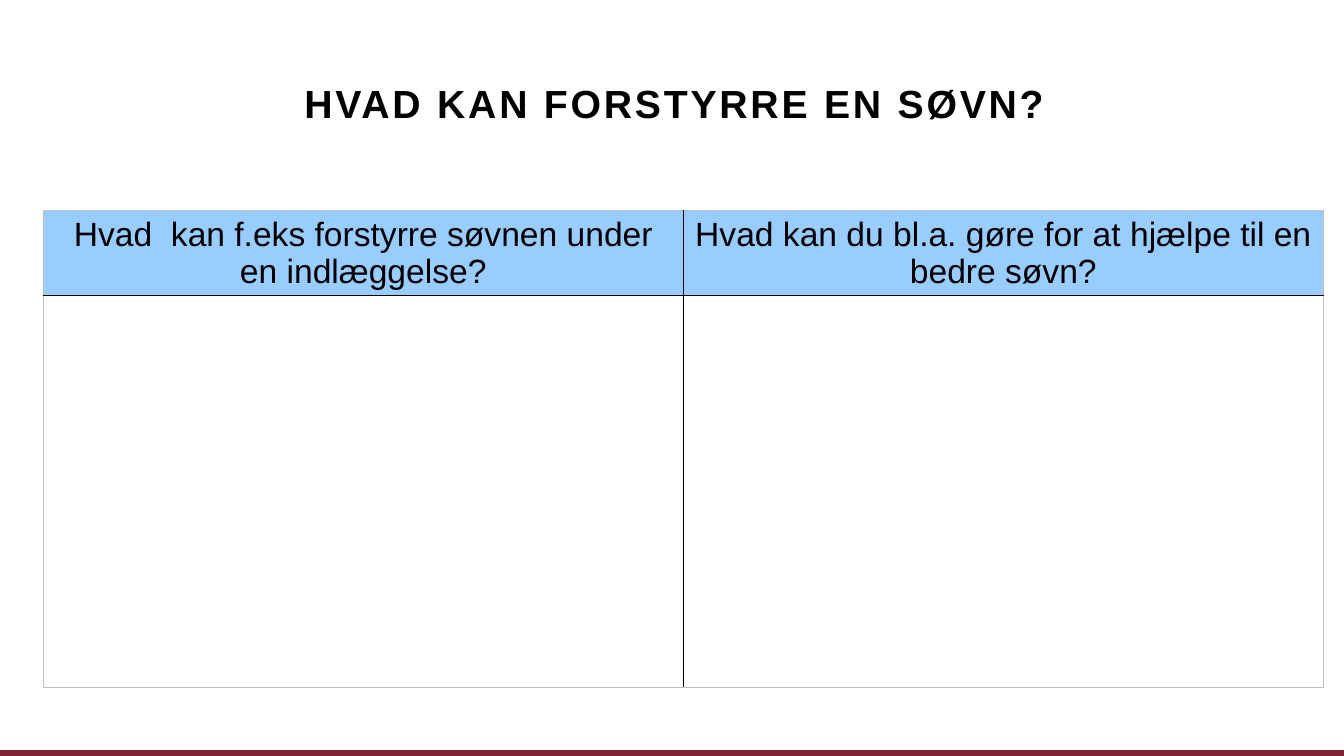
import dataclasses

import lxml.etree
import pptx
import pptx.dml.color
import pptx.enum.shapes
import pptx.enum.text
import pptx.oxml.ns
import pptx.util

Cm = pptx.util.Cm
Pt = pptx.util.Pt
COLOURS = {"ink": "000000", "header": "99CCFF", "body": "FFFFFF", "frame": "C0C0C0", "bar": "822433"}
ROW_HEIGHTS = (2.01, 9.88)


@dataclasses.dataclass(frozen=True)
class Column:
    question: str
    width: float = 16.13


COLUMNS = (
    Column("Hvad  kan f.eks forstyrre søvnen under en indlæggelse?"),
    Column("Hvad kan du bl.a. gøre for at hjælpe til en bedre søvn?"),
)


def colour(name: str) -> pptx.dml.color.RGBColor:
    """Return the named colour."""
    return pptx.dml.color.RGBColor.from_string(COLOURS[name])


def style_paragraph(para, size: float, bold: bool = False) -> None:
    """Centre a paragraph and set its font."""
    para.alignment = pptx.enum.text.PP_ALIGN.CENTER
    para.font.name = "Arial"
    para.font.size = Pt(size)
    para.font.bold = bold
    para.font.color.rgb = colour("ink")


def add_bar(page) -> None:
    """Draw the bar along the bottom edge."""
    bar = page.shapes.add_shape(
        pptx.enum.shapes.MSO_SHAPE.RECTANGLE, Cm(0), Cm(18.9), Cm(33.87), Cm(0.15)
    )
    bar.shadow.inherit = False
    bar.fill.solid()
    bar.fill.fore_color.rgb = colour("bar")
    bar.line.fill.background()


def format_title(page) -> None:
    """Place, fill and style the title."""
    title = page.shapes.title
    title.left, title.top, title.width, title.height = Cm(2.39), Cm(0.69), Cm(29.21), Cm(3.68)
    frame = title.text_frame
    frame.text = "HVAD KAN FORSTYRRE EN SØVN?"
    frame.auto_size = pptx.enum.text.MSO_AUTO_SIZE.NONE
    frame.vertical_anchor = pptx.enum.text.MSO_ANCHOR.BOTTOM
    frame.margin_left = frame.margin_right = frame.margin_top = Cm(0)
    frame.margin_bottom = Cm(1.16)
    para = frame.paragraphs[0]
    para.line_spacing = 0.9
    style_paragraph(para, 28, bold=True)
    para.runs[0].font._element.set("spc", "200")


def add_border(cell, side: str, name: str) -> None:
    """Add a one-point line on one side of a cell."""
    qn = pptx.oxml.ns.qn
    line = lxml.etree.SubElement(cell._tc.get_or_add_tcPr(), qn(f"a:ln{side}"), w=str(Pt(1)))
    fill = lxml.etree.SubElement(line, qn("a:solidFill"))
    lxml.etree.SubElement(fill, qn("a:srgbClr"), val=COLOURS[name])


def add_question_table(page) -> None:
    """Draw the table of questions with empty answer cells."""
    total_width = sum(column.width for column in COLUMNS)
    table = page.shapes.add_table(
        len(ROW_HEIGHTS), len(COLUMNS), Cm(1.09), Cm(5.31), Cm(total_width), Cm(sum(ROW_HEIGHTS))
    ).table
    for row, height in zip(table.rows, ROW_HEIGHTS):
        row.height = Cm(height)
    last_row, last_column = len(ROW_HEIGHTS) - 1, len(COLUMNS) - 1
    for column_index, column in enumerate(COLUMNS):
        table.columns[column_index].width = Cm(column.width)
        for row_index in range(len(ROW_HEIGHTS)):
            cell = table.cell(row_index, column_index)
            is_outer = {
                "L": column_index == 0,
                "R": column_index == last_column,
                "T": row_index == 0,
                "B": row_index == last_row,
            }
            for side, outer in is_outer.items():
                add_border(cell, side, "frame" if outer else "ink")
            cell.fill.solid()
            cell.fill.fore_color.rgb = colour("header" if row_index == 0 else "body")
        header = table.cell(0, column_index)
        header.text = column.question
        style_paragraph(header.text_frame.paragraphs[0], 24)


def main() -> None:
    """Build and save the deck."""
    deck = pptx.Presentation()
    deck.slide_width, deck.slide_height = Cm(33.87), Cm(19.05)
    page = deck.slides.add_slide(deck.slide_layouts.get_by_name("Title Only"))
    add_bar(page)
    format_title(page)
    add_question_table(page)
    deck.save("out.pptx")


if __name__ == "__main__":
    main()
